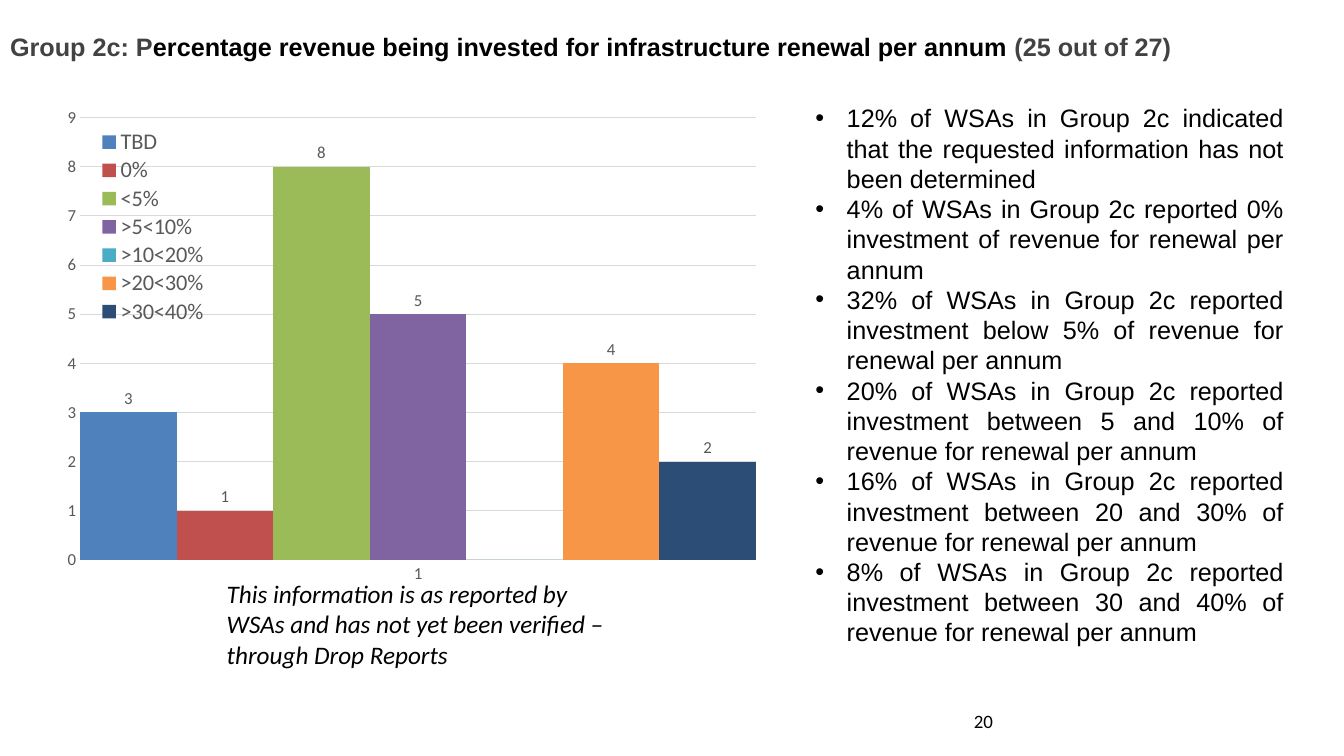
from lxml import etree
from pptx import Presentation
from pptx.chart.data import CategoryChartData
from pptx.dml.color import RGBColor
from pptx.enum import chart as ch, text
from pptx.oxml import ns
from pptx.util import Inches, Pt

BLACK = RGBColor(0, 0, 0)
WHITE = RGBColor(0xFF, 0xFF, 0xFF)
TITLE_GREY = RGBColor(0x42, 0x42, 0x42)
LABEL_GREY = RGBColor(0x59, 0x59, 0x59)
GRID_GREY = RGBColor(0xD9, 0xD9, 0xD9)

INVESTMENT = [
    ("TBD", 3, RGBColor(0x4F, 0x81, 0xBD)),
    ("0%", 1, RGBColor(0xC0, 0x50, 0x4D)),
    ("<5%", 8, RGBColor(0x9B, 0xBB, 0x59)),
    (">5<10%", 5, RGBColor(0x80, 0x64, 0xA2)),
    (">10<20%", 0, RGBColor(0x4B, 0xAC, 0xC6)),
    (">20<30%", 4, RGBColor(0xF7, 0x96, 0x46)),
    (">30<40%", 2, RGBColor(0x2C, 0x4D, 0x75)),
]

FINDINGS = [
    "12% of WSAs in Group 2c indicated that the requested information has not been determined",
    "4% of WSAs in Group 2c reported 0% investment of revenue for renewal per annum",
    "32% of WSAs in Group 2c reported investment below 5% of revenue for renewal per annum",
    "20% of WSAs in Group 2c reported investment between 5 and 10% of revenue for renewal per annum",
    "16% of WSAs in Group 2c reported investment between 20 and 30% of revenue for renewal per annum",
    "8% of WSAs in Group 2c reported investment between 30 and 40% of revenue for renewal per annum",
]


def style(font, size, color, name="Calibri", bold=False, italic=False):
    font.size, font.name = Pt(size), name
    font.bold, font.italic = bold, italic
    font.color.rgb = color


def add_title(slide, x, y, w, h):
    title = slide.shapes.title
    title.left, title.top, title.width, title.height = map(Inches, (x, y, w, h))
    title.fill.solid()
    title.fill.fore_color.rgb = WHITE
    tf = title.text_frame
    tf.word_wrap = True
    tf.auto_size = text.MSO_AUTO_SIZE.NONE
    tf.vertical_anchor = text.MSO_ANCHOR.MIDDLE
    p = tf.paragraphs[0]
    p.alignment = text.PP_ALIGN.LEFT
    for words, color in (
        ("Group 2c: P", TITLE_GREY),
        ("ercentage revenue being invested for infrastructure renewal per annum ", BLACK),
        ("(25 out of 27)", TITLE_GREY),
    ):
        r = p.add_run()
        r.text = words
        style(r.font, 18, color, "Arial", bold=True)


def add_text(slide, x, y, w, h, words, size, italic=False, anchor=text.MSO_ANCHOR.TOP):
    tf = slide.shapes.add_textbox(*map(Inches, (x, y, w, h))).text_frame
    tf.word_wrap = True
    tf.vertical_anchor = anchor
    tf.text = words
    style(tf.paragraphs[0].runs[0].font, size, BLACK, italic=italic)


def add_findings(slide, x, y, w, h):
    tf = slide.shapes.add_textbox(*map(Inches, (x, y, w, h))).text_frame
    tf.word_wrap = True
    for i, finding in enumerate(FINDINGS):
        p = tf.add_paragraph() if i else tf.paragraphs[0]
        p.text = finding
        p.alignment = text.PP_ALIGN.JUSTIFY
        pPr = p._p.get_or_add_pPr()
        pPr.set("marL", str(Inches(0.31)))
        pPr.set("indent", str(-Inches(0.31)))
        etree.SubElement(pPr, ns.qn("a:buFont")).set("typeface", "Arial")
        etree.SubElement(pPr, ns.qn("a:buChar")).set("char", "•")
        style(p.runs[0].font, 18, BLACK, "Arial")


def place_part(part, index, inner, **box):
    for old in part.findall(ns.qn("c:layout")):
        part.remove(old)
    layout = etree.Element(ns.qn("c:layout"))
    manual = etree.SubElement(layout, ns.qn("c:manualLayout"))
    settings = {"layoutTarget": "inner"} if inner else {}
    settings.update(xMode="edge", yMode="edge", **box)
    for tag, value in settings.items():
        etree.SubElement(manual, ns.qn(f"c:{tag}")).set("val", str(value))
    part.insert(index, layout)


def add_investment_chart(slide, x, y, w, h):
    data = CategoryChartData()
    data.categories = ["1"]
    for name, value, _ in INVESTMENT:
        data.add_series(name, [value])
    chart = slide.shapes.add_chart(
        ch.XL_CHART_TYPE.COLUMN_CLUSTERED, *map(Inches, (x, y, w, h)), data
    ).chart
    chart.has_title = False
    style(chart.font, 10, BLACK)

    plot = chart.plots[0]
    plot.gap_width = plot.overlap = 0
    plot.vary_by_categories = False
    for series, (_, value, color) in zip(plot.series, INVESTMENT):
        series.format.fill.solid()
        series.format.fill.fore_color.rgb = color
        series.invert_if_negative = False
        if value:
            labels = series.data_labels
            labels.show_value = True
            labels.position = ch.XL_LABEL_POSITION.OUTSIDE_END
            style(labels.font, 12, LABEL_GREY)

    for axis in (chart.category_axis, chart.value_axis):
        axis.major_tick_mark = axis.minor_tick_mark = ch.XL_TICK_MARK.NONE
        style(axis.tick_labels.font, 12, LABEL_GREY)
    values = chart.value_axis
    values.minimum_scale, values.maximum_scale, values.major_unit = 0, 9, 1
    values.format.line.fill.background()
    for line in (chart.category_axis.format.line, values.major_gridlines.format.line):
        line.color.rgb = GRID_GREY
        line.width = Pt(0.75)

    chart.has_legend = True
    legend = chart.legend
    legend.position = ch.XL_LEGEND_POSITION.RIGHT
    legend.include_in_layout = True
    style(legend.font, 16, LABEL_GREY)
    place_part(legend._element, 1, False, x=0.05, y=0.06, w=0.14, h=0.4)
    plot_area = chart._chartSpace.chart.plotArea
    place_part(plot_area, 0, True, x=0.034, y=0.04, w=0.8, h=0.89)


def main():
    prs = Presentation()
    prs.slide_width, prs.slide_height = Inches(13.33), Inches(7.5)
    slide = prs.slides.add_slide(prs.slide_layouts[5])
    add_text(slide, 9.56, 6.95, 3.11, 0.4, "20", 13.5, anchor=text.MSO_ANCHOR.MIDDLE)
    add_title(slide, 0, 0.26, 13.19, 0.4)
    add_investment_chart(slide, 0.51, 0.97, 8.38, 4.93)
    add_findings(slide, 7.99, 0.97, 4.84, 6.46)
    add_text(
        slide, 2.15, 5.69, 4.02, 1.01,
        "This information is as reported by WSAs and has not yet been verified –through Drop Reports",
        18, italic=True,
    )
    prs.save("out.pptx")


if __name__ == "__main__":
    main()
